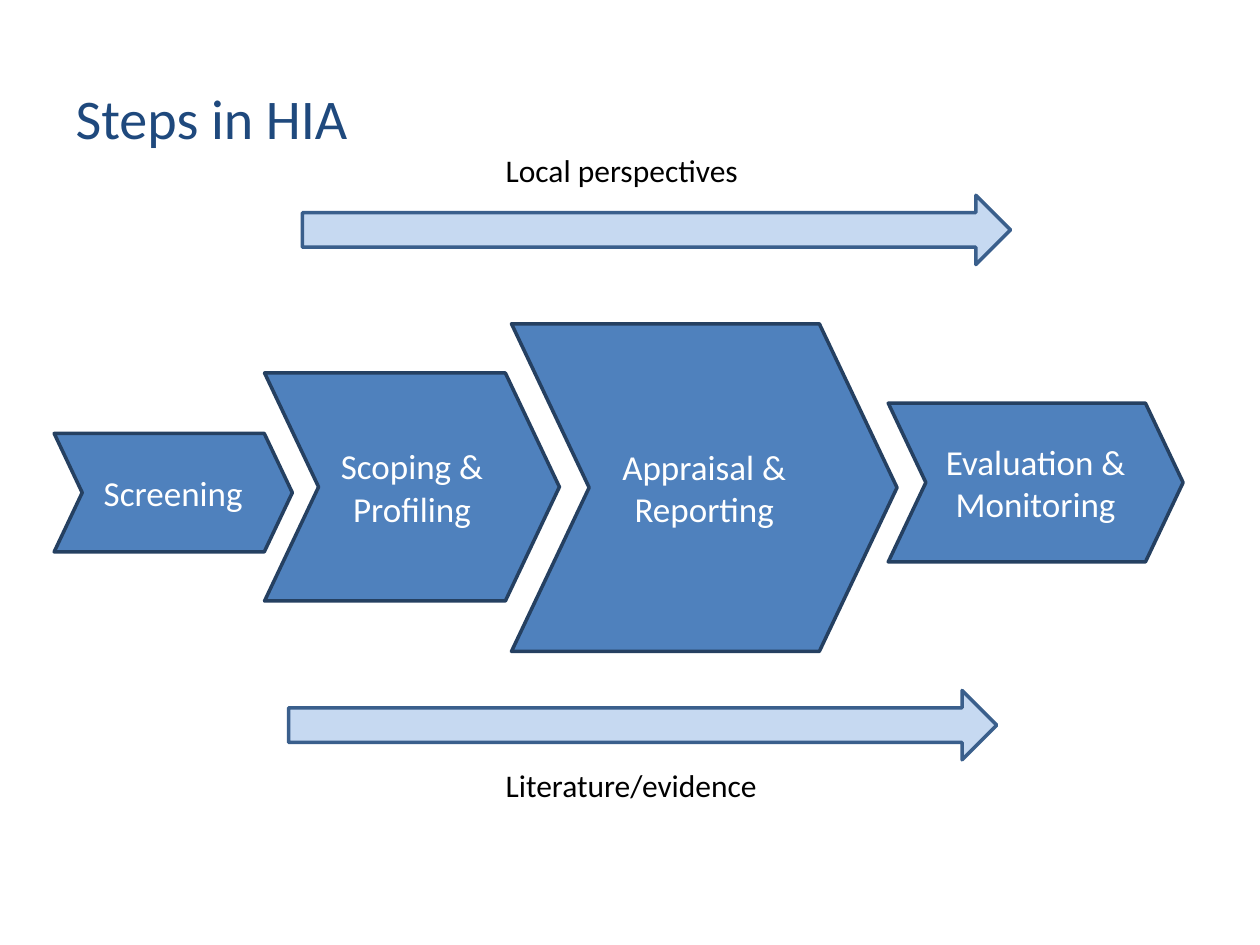
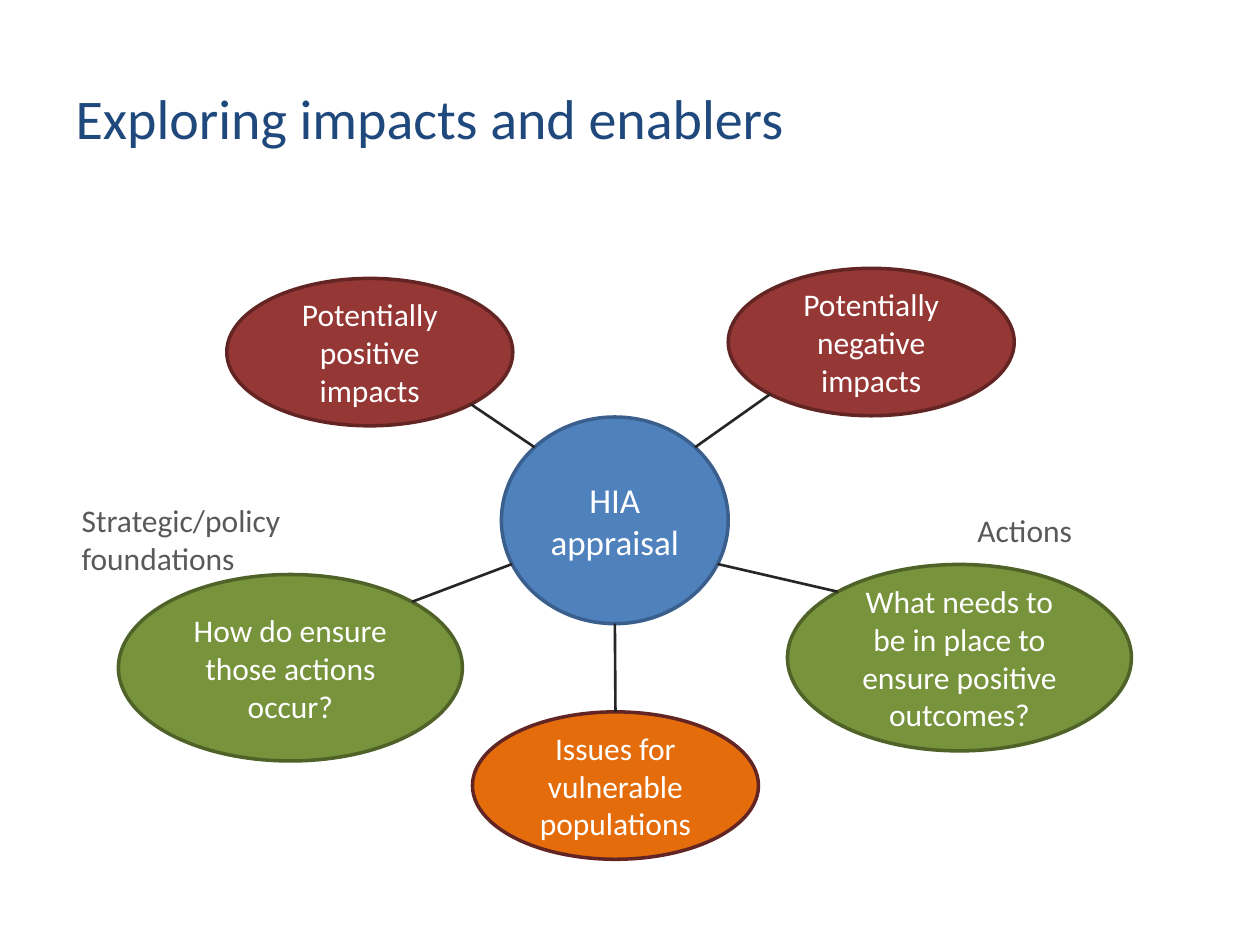
from math import cos, radians, sin

from lxml import etree
from pptx import Presentation
from pptx.dml.color import RGBColor
from pptx.enum.shapes import MSO_CONNECTOR, MSO_SHAPE
from pptx.enum.text import MSO_ANCHOR, MSO_AUTO_SIZE, PP_ALIGN
from pptx.oxml.ns import qn
from pptx.util import Inches, Pt

STRAIGHT = MSO_CONNECTOR.STRAIGHT
CHEVRON, ARROW, ELLIPSE = MSO_SHAPE.CHEVRON, MSO_SHAPE.RIGHT_ARROW, MSO_SHAPE.OVAL
LEFT, CENTER = PP_ALIGN.LEFT, PP_ALIGN.CENTER
TOP, MIDDLE = MSO_ANCHOR.TOP, MSO_ANCHOR.MIDDLE
TITLE_ONLY = 5

FONT = "Calibri"
WHITE, BLACK, GREY, INK = "FFFFFF", "000000", "595959", "262626"
NAVY, BLUE, BLUE_EDGE, DARK_BLUE, PALE_BLUE = "1F497D", "4F81BD", "3A5F8C", "254061", "C6D9F1"
RED, RED_EDGE, GREEN, GREEN_EDGE, ORANGE = "953735", "632523", "77933C", "4F6228", "E46C0A"

COLUMNS, ROWS = 100, 75


def rgb(value):
    return RGBColor.from_string(value)


def write(frame, text, size=18, color=WHITE, align=CENTER, anchor=MIDDLE, wrap=True):
    frame.text = text
    frame.word_wrap = wrap
    frame.auto_size = MSO_AUTO_SIZE.NONE
    frame.vertical_anchor = anchor
    for paragraph in frame.paragraphs:
        paragraph.alignment = align
        paragraph.font.name = FONT
        paragraph.font.size = Pt(size)
        paragraph.font.color.rgb = rgb(color)


def rim(ellipse, degrees):
    """Point on an ellipse's edge; angles run clockwise from the right."""
    angle = radians(degrees)
    rx, ry = ellipse.width / 2, ellipse.height / 2
    return (round(ellipse.left + rx * (1 + cos(angle))),
            round(ellipse.top + ry * (1 + sin(angle))))


class Deck:
    def __init__(self):
        self.prs = Presentation()
        self.prs.slide_width, self.prs.slide_height = Inches(10), Inches(7.5)
        self.slide = None

    def box(self, left, top, width, height):
        """Turn columns and rows of the grid into slide lengths."""
        column = self.prs.slide_width / COLUMNS
        row = self.prs.slide_height / ROWS
        return (round(left * column), round(top * row),
                round(width * column), round(height * row))

    def new_slide(self, title):
        self.slide = self.prs.slides.add_slide(self.prs.slide_layouts[TITLE_ONLY])
        heading = self.slide.shapes.title
        heading.left, heading.top, heading.width, heading.height = self.box(5, 6.1, 90, 6.4)
        write(heading.text_frame, title, size=32, color=NAVY, align=LEFT)

    def shape(self, kind, place, fill, edge, text="", size=18):
        shape = self.slide.shapes.add_shape(kind, *self.box(*place))
        shape.shadow.inherit = False
        shape.fill.solid()
        shape.fill.fore_color.rgb = rgb(fill)
        shape.line.color.rgb = rgb(edge)
        shape.line.width = Pt(2)
        if text:
            write(shape.text_frame, text, size=size)
        return shape

    def step(self, text, *place):
        chevron = self.shape(CHEVRON, place, BLUE, DARK_BLUE, text, size=20)
        chevron.adjustments[0] = 0.237

    def label(self, text, *place, **style):
        label = self.slide.shapes.add_textbox(*self.box(*place))
        write(label.text_frame, text, anchor=TOP, **style)

    def link(self, start, end):
        line = self.slide.shapes.add_connector(STRAIGHT, *start, *end)
        line.line.color.rgb = rgb(INK)
        line.line.width = Pt(1.5)
        etree.SubElement(line._element.spPr, qn("a:effectLst"))
        return line


def steps_slide(deck):
    deck.new_slide("Steps in HIA")
    for left, top in ((24, 15.5), (22.9, 54.8)):
        deck.shape(ARROW, (left, top, 56.2, 5.5), PALE_BLUE, BLUE_EDGE)
    deck.step("Screening", 4.3, 34.4, 18.9, 9.4)
    deck.step("Scoping & Profiling", 21, 29.6, 23.4, 18.1)
    deck.step("Appraisal & Reporting", 40.6, 25.7, 30.6, 26)
    deck.step("Evaluation & Monitoring", 70.5, 32, 23.4, 12.6)
    deck.label("Local perspectives", 39, 11.5, 20.7, 4, color=BLACK, wrap=False)
    deck.label("Literature/evidence", 39, 60.3, 22.2, 4, color=BLACK, wrap=False)


def impacts_slide(deck):
    deck.new_slide("Exploring impacts and enablers")
    appraisal = deck.shape(ELLIPSE, (39.8, 33.1, 18, 16.4), BLUE, BLUE_EDGE,
                           "HIA\nappraisal", size=20)

    impact, enabler = (22.7, 11.7), (27.3, 14.8)
    # text, left and top, size, fill, edge, angle at the appraisal, angle at the topic
    topics = (
        ("Potentially positive impacts", (18, 22.1), impact, RED, RED_EDGE, 225, 45),
        ("Potentially negative impacts", (57.8, 21.3), impact, RED, RED_EDGE, 315, 135),
        ("What needs to be in place to ensure positive outcomes?",
         (62.5, 44.8), enabler, GREEN, GREEN_EDGE, 25, 225),
        ("How do ensure those actions occur?",
         (9.4, 45.6), enabler, GREEN, GREEN_EDGE, 155, 315),
    )
    for text, corner, extent, fill, edge, leave, arrive in topics:
        topic = deck.shape(ELLIPSE, corner + extent, fill, edge, text)
        deck.link(rim(appraisal, leave), rim(topic, arrive))

    issues = deck.shape(ELLIPSE, (37.5, 56.5, *impact), ORANGE, RED_EDGE,
                        "Issues for vulnerable populations")
    deck.link(rim(issues, 270), rim(appraisal, 90)).begin_connect(issues, 0)

    deck.label("Actions", 76.6, 40.1, 15.6, 4, color=GREY, align=LEFT)
    deck.label("Strategic/policy foundations", 5.5, 39.3, 19.5, 7.1, color=GREY, align=LEFT)


def main():
    deck = Deck()
    steps_slide(deck)
    impacts_slide(deck)
    deck.prs.save("out.pptx")


if __name__ == "__main__":
    main()
